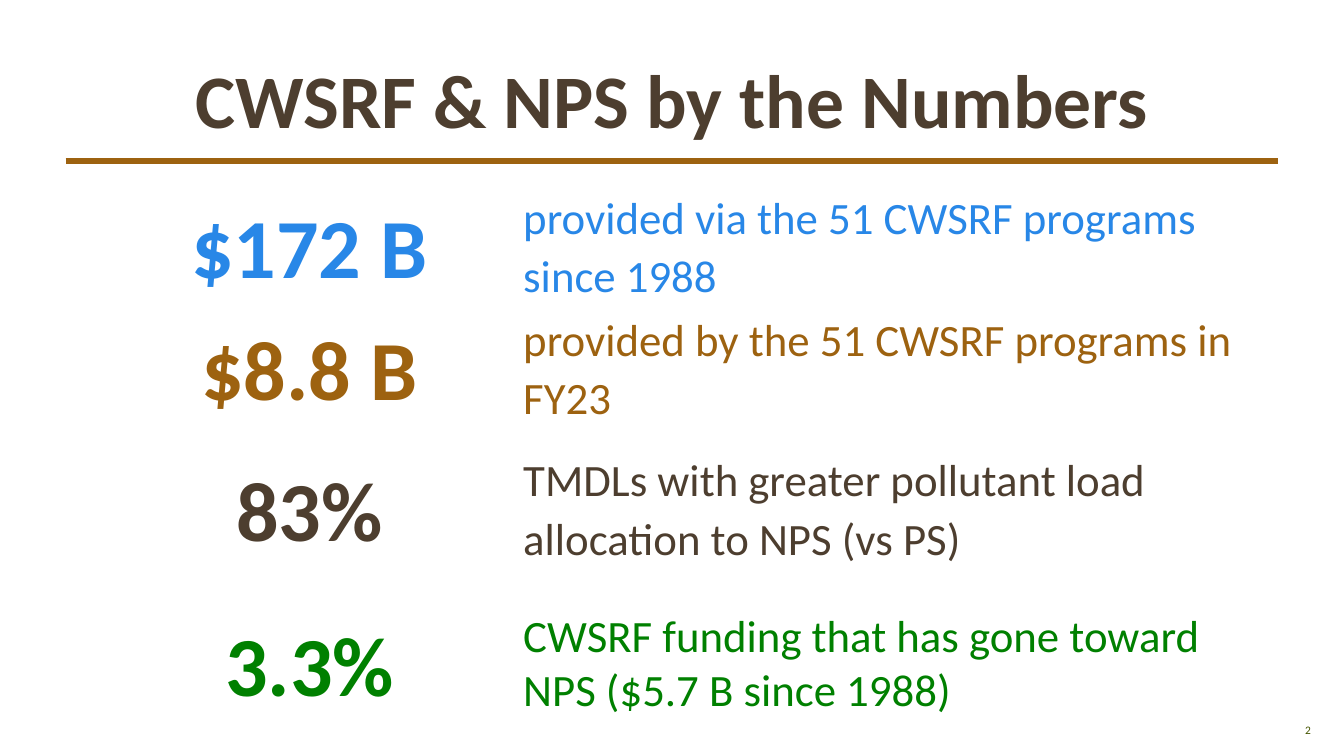
"""Build the slide of CWSRF and NPS key figures."""
from lxml import etree
from pptx import Presentation
from pptx.dml.color import RGBColor
from pptx.enum import shapes, text
from pptx.oxml import ns
from pptx.util import Inches, Pt

HUES = {"blue": "2887E7", "gold": "9D6210", "brown": "4D3E2F",
        "green": "008000", "olive": "455500", "white": "FFFFFF"}
MID = text.MSO_ANCHOR.MIDDLE
LEFT, CENTER, RIGHT = text.PP_ALIGN.LEFT, text.PP_ALIGN.CENTER, text.PP_ALIGN.RIGHT


def write(frame, words, size, hue, bold=False, align=LEFT, space=None):
    frame.word_wrap = True
    para = frame.paragraphs[0]
    para.alignment = align
    para.line_spacing = space
    run = para.add_run()
    run.text = words
    run.font.name = "Calibri"
    run.font.size = Pt(size)
    run.font.bold = bold
    run.font.color.rgb = RGBColor.from_string(HUES[hue])


deck = Presentation()
deck.slide_width, deck.slide_height = Inches(13.33), Inches(7.5)
slide = deck.slides.add_slide(deck.slide_layouts[5])

title = slide.shapes.title
title.left, title.top = Inches(1.54), Inches(0.15)
title.width, title.height = Inches(10.25), Inches(1.33)
title.text_frame.vertical_anchor = text.MSO_ANCHOR.BOTTOM
write(title.text_frame, "CWSRF & NPS by the Numbers", 54, "brown", bold=True, align=CENTER)

page = slide.shapes.add_textbox(Inches(10.1), Inches(7.04), Inches(3), Inches(0.4))
page.text_frame.vertical_anchor = MID
write(page.text_frame, "2", 8.2, "olive", align=RIGHT)

facts = [
    ("$172 B", "provided via the 51 CWSRF programs since 1988", "blue", 1.21, 1.07),
    ("$8.8 B", "provided by the 51 CWSRF programs in FY23", "gold", 1.21, 1.07),
    ("83%", "TMDLs with greater pollutant load allocation to NPS (vs PS)", "brown", 1.58, 1.07),
    ("3.3%", "CWSRF funding that has gone toward NPS ($5.7 B since 1988)", "green", 1.5, 1.0),
]
table = slide.shapes.add_table(len(facts), 2, Inches(1.02), Inches(1.84),
                               Inches(11.29), Inches(5.5)).table
table.first_row = table.horz_banding = False
for col, width in zip(table.columns, (4.1, 7.19)):
    col.width = Inches(width)
for row, (figure, note, hue, height, space) in zip(table.rows, facts):
    row.height = Inches(height)
    for cell in row.cells:
        cell.fill.solid()
        cell.fill.fore_color.rgb = RGBColor.from_string(HUES["white"])
        cell.vertical_anchor = MID
        cell.margin_left = cell.margin_right = Inches(0.07)
        cell.margin_top = cell.margin_bottom = 0
    write(row.cells[0].text_frame, figure, 60, hue, bold=True, align=CENTER, space=1.07)
    write(row.cells[1].text_frame, note, 32, hue, space=space)

rule = slide.shapes.add_connector(shapes.MSO_CONNECTOR.STRAIGHT, Inches(0.65), Inches(1.6),
                                  Inches(12.68), Inches(1.6))
rule.line.color.rgb = RGBColor.from_string(HUES["gold"])
rule.line.width = Pt(4)
etree.SubElement(rule._element.spPr, ns.qn("a:effectLst"))

deck.save("out.pptx")
